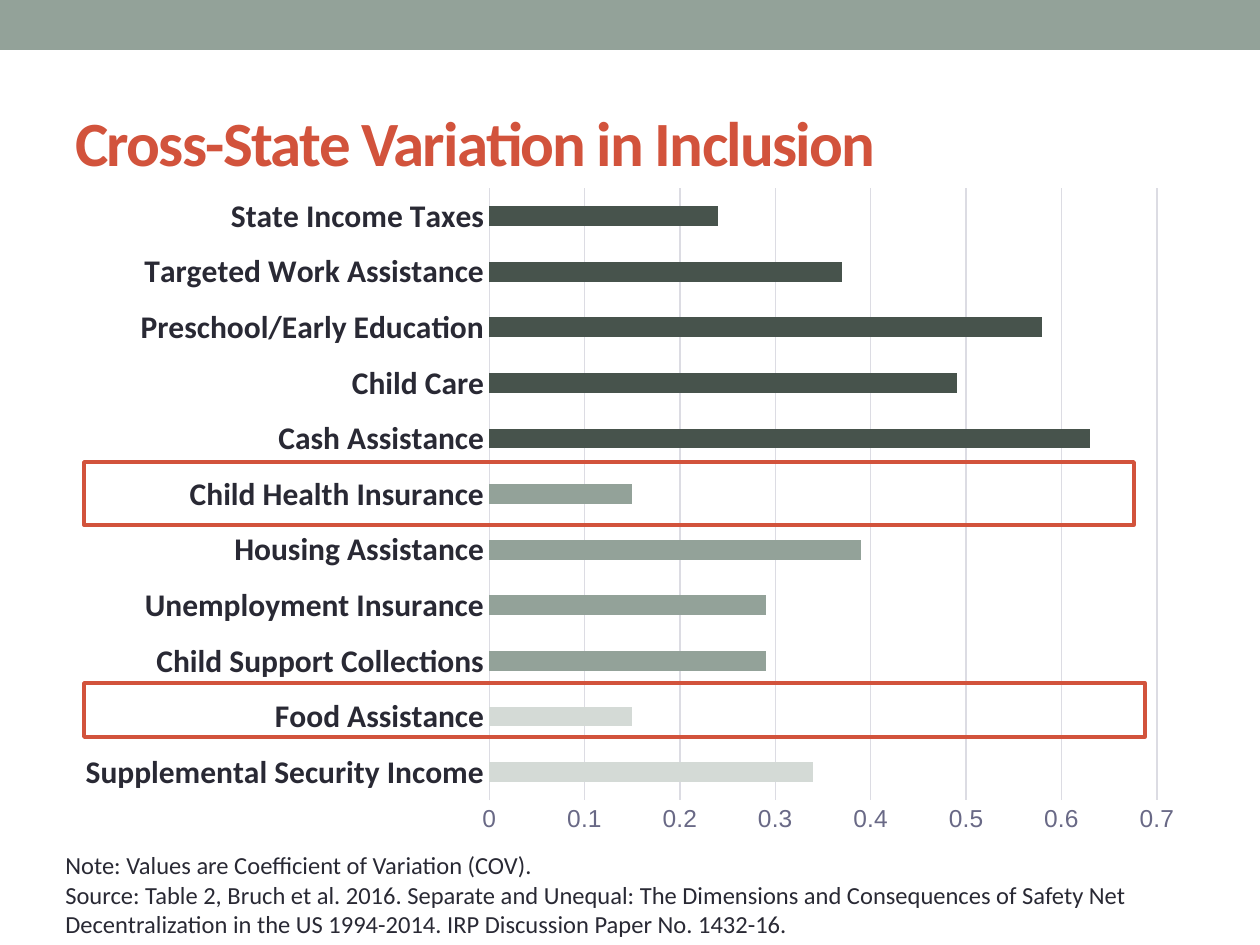
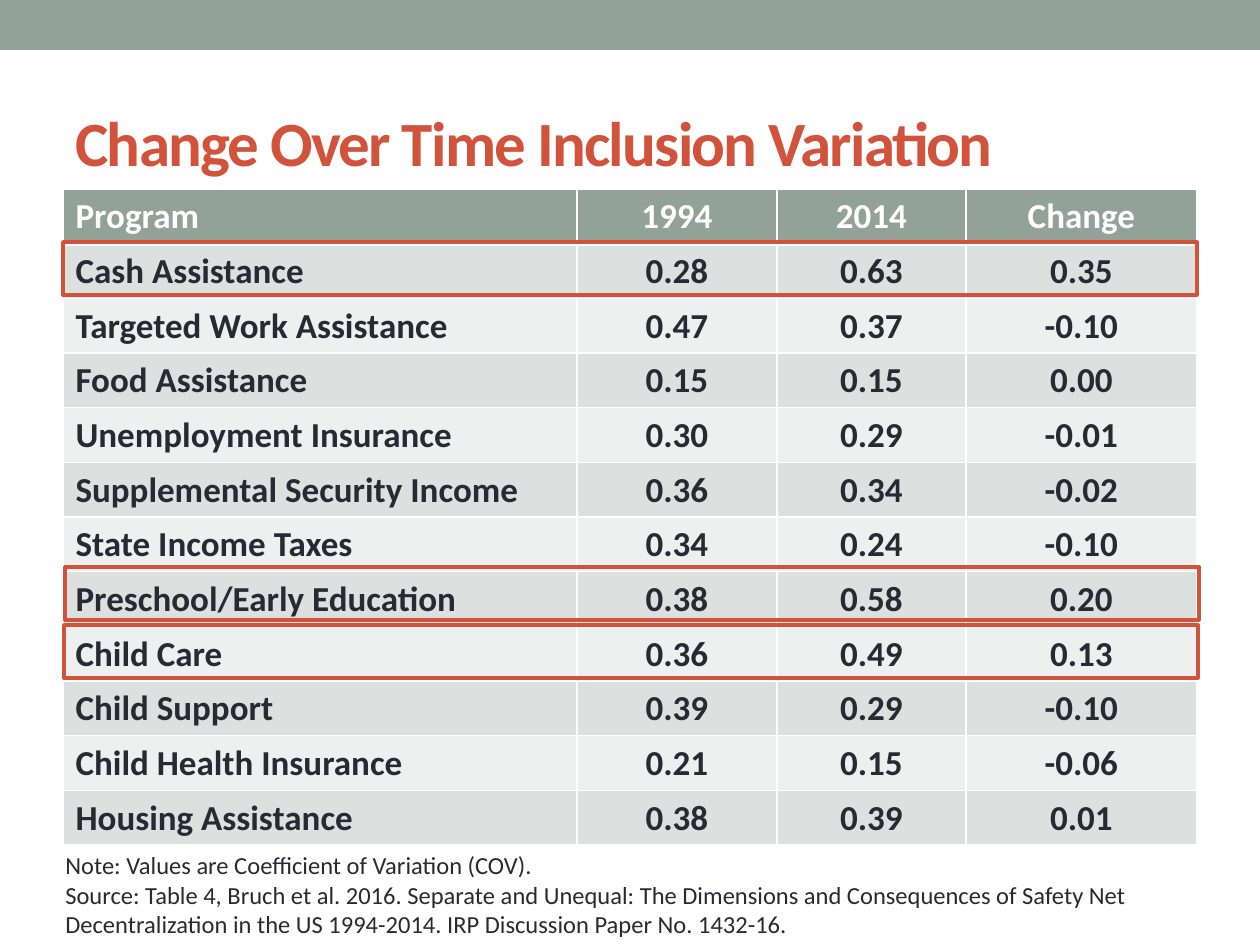
from collections import namedtuple
from dataclasses import dataclass

from lxml import etree
from pptx import Presentation
from pptx.chart.data import CategoryChartData
from pptx.dml.color import RGBColor
from pptx.enum.chart import XL_CHART_TYPE as ChartType, XL_TICK_MARK as TickMark
from pptx.enum.shapes import MSO_SHAPE as Preset
from pptx.enum.text import MSO_ANCHOR as Anchor, PP_ALIGN as Align
from pptx.oxml import parse_xml
from pptx.oxml.ns import nsdecls, qn
from pptx.util import Emu, Pt

PX_PER_INCH = 126
Box = namedtuple("Box", "left top width height")


@dataclass(frozen=True)
class Theme:
    sage: str = "93A299"
    pale_sage: str = "D4DAD6"
    dark_sage: str = "47534C"
    rust: str = "D2533C"
    ink: str = "292934"
    axis_text: str = "696986"
    grid: str = "DCDCE3"
    white: str = "FFFFFF"
    band_odd: str = "DCE0DE"
    band_even: str = "EEF0EF"
    font: str = "Calibri"
    axis_font: str = "Arial"
    title_size: int = 36
    cell_size: int = 20
    category_size: int = 18
    small_size: int = 14
    chart_size: int = 10
    grid_width: float = 0.75
    highlight_width: float = 2.08


THEME = Theme()
SLIDE = Box(0, 0, 1260, 945)
BAND = Box(0, 0, 1260, 50)
TITLE = Box(63, 73, 1134, 136)
NOTE = Box(53, 844, 1144, 102)
CHART = Box(63, 175, 1134, 671)
TABLE = Box(63, 189, 1134, 624)

# From the bottom of the chart to the top
VARIATION = [
    ("Supplemental Security Income", 0.34, THEME.pale_sage),
    ("Food Assistance", 0.15, THEME.pale_sage),
    ("Child Support Collections", 0.29, THEME.sage),
    ("Unemployment Insurance", 0.29, THEME.sage),
    ("Housing Assistance", 0.39, THEME.sage),
    ("Child Health Insurance", 0.15, THEME.sage),
    ("Cash Assistance", 0.63, THEME.dark_sage),
    ("Child Care", 0.49, THEME.dark_sage),
    ("Preschool/Early Education", 0.58, THEME.dark_sage),
    ("Targeted Work Assistance", 0.37, THEME.dark_sage),
    ("State Income Taxes", 0.24, THEME.dark_sage),
]
CHART_HIGHLIGHTS = [Box(84, 462, 1050, 63), Box(84, 683, 1061, 54)]

CHANGE = [
    ("Program", "1994", "2014", "Change"),
    ("Cash Assistance", "0.28", "0.63", "0.35"),
    ("Targeted Work Assistance", "0.47", "0.37", "-0.10"),
    ("Food Assistance", "0.15", "0.15", "0.00"),
    ("Unemployment Insurance", "0.30", "0.29", "-0.01"),
    ("Supplemental Security Income", "0.36", "0.34", "-0.02"),
    ("State Income Taxes", "0.34", "0.24", "-0.10"),
    ("Preschool/Early Education", "0.38", "0.58", "0.20"),
    ("Child Care", "0.36", "0.49", "0.13"),
    ("Child Support", "0.39", "0.29", "-0.10"),
    ("Child Health Insurance", "0.21", "0.15", "-0.06"),
    ("Housing Assistance", "0.38", "0.39", "0.01"),
]
COLUMN_WIDTHS = [514, 200, 189, 231]
TABLE_HIGHLIGHTS = [Box(63, 242, 1134, 53), Box(65, 567, 1134, 53), Box(64, 625, 1134, 53)]


def px(length):
    return Emu(round(length * 914400 / PX_PER_INCH))


def place(box):
    return [px(length) for length in box]


def rgb(color):
    return RGBColor.from_string(color)


def style_font(font, size, color, bold=False, name=THEME.font):
    font.name, font.size, font.bold = name, Pt(size), bold
    font.color.rgb = rgb(color)


def add_text(page, box, lines, size, color, bold=False):
    """Add a wrapping text box, one paragraph a line, and return its frame."""
    frame = page.shapes.add_textbox(*place(box)).text_frame
    frame.word_wrap = True
    frame.text = "\n".join(lines)
    for para in frame.paragraphs:
        for span in para.runs:
            style_font(span.font, size, color, bold)
    return frame


def add_rectangle(page, box, fill=None, line=None):
    shape = page.shapes.add_shape(Preset.RECTANGLE, *place(box))
    shape.shadow.inherit = False
    if fill:
        shape.fill.solid()
        shape.fill.fore_color.rgb = rgb(fill)
    else:
        shape.fill.background()
    if line:
        shape.line.color.rgb = rgb(line)
        shape.line.width = Pt(THEME.highlight_width)
    else:
        shape.line.fill.background()


def add_highlights(page, boxes):
    for box in boxes:
        add_rectangle(page, box, line=THEME.rust)


def add_page(deck, title, table_number):
    """Add a slide with the band, the title and the source note."""
    page = deck.slides.add_slide(deck.slide_layouts[6])
    add_rectangle(page, BAND, fill=THEME.sage)
    frame = add_text(page, TITLE, [title], THEME.title_size, THEME.rust, bold=True)
    frame.vertical_anchor = Anchor.MIDDLE
    frame.paragraphs[0].runs[0].font._element.set("spc", "-100")
    add_text(page, NOTE, [
        "Note: Values are Coefficient of Variation (COV).",
        f"Source: Table {table_number}, Bruch et al. 2016. Separate and Unequal: "
        "The Dimensions and Consequences of Safety Net Decentralization in the US "
        "1994-2014. IRP Discussion Paper No. 1432-16.",
    ], THEME.small_size, THEME.ink)
    return page


def style_line(line):
    line.color.rgb = rgb(THEME.grid)
    line.width = Pt(THEME.grid_width)


def add_variation_chart(page, box):
    names, values, tones = zip(*VARIATION)
    data = CategoryChartData()
    data.categories = names
    data.add_series("Series 1", values)
    chart = page.shapes.add_chart(ChartType.BAR_CLUSTERED, *place(box), data).chart
    chart.has_legend = chart.has_title = False
    style_font(chart.font, THEME.chart_size, THEME.ink, name=THEME.axis_font)

    plot = chart.plots[0]
    plot.gap_width = 182
    plot.vary_by_categories = False
    series = plot.series[0]
    series.format.fill.solid()
    series.format.fill.fore_color.rgb = rgb(THEME.sage)
    for index, tone in enumerate(tones):
        if tone != THEME.sage:
            fill = series.points[index].format.fill
            fill.solid()
            fill.fore_color.rgb = rgb(tone)

    programs, scale = chart.category_axis, chart.value_axis
    for axis in (programs, scale):
        axis.major_tick_mark = axis.minor_tick_mark = TickMark.NONE
    style_font(programs.tick_labels.font, THEME.category_size, THEME.ink, bold=True)
    style_line(programs.format.line)
    style_font(scale.tick_labels.font, THEME.small_size, THEME.axis_text, name=THEME.axis_font)
    scale.minimum_scale, scale.maximum_scale, scale.major_unit = 0, 0.7, 0.1
    scale.format.line.fill.background()
    style_line(scale.major_gridlines.format.line)


def add_border(cell, side, width):
    border = parse_xml(f'<a:ln{side} {nsdecls("a")} w="{Pt(width)}"/>')
    fill = etree.SubElement(border, qn("a:solidFill"))
    etree.SubElement(fill, qn("a:srgbClr"), val=THEME.white)
    cell._tc.get_or_add_tcPr().append(border)


def style_cell(cell, row, column):
    """Format a cell by its place: header row, banded rows, centred values."""
    for side in "LRTB":
        under_header = (row, side) in ((0, "B"), (1, "T"))
        add_border(cell, side, 3 if under_header else 1)
    bands = (THEME.band_even, THEME.band_odd)
    cell.fill.solid()
    cell.fill.fore_color.rgb = rgb(bands[row % 2] if row else THEME.sage)
    para = cell.text_frame.paragraphs[0]
    para.alignment = Align.CENTER if column else Align.LEFT
    style_font(para.runs[0].font, THEME.cell_size, THEME.ink if row else THEME.white, bold=True)


def add_change_table(page, box):
    table = page.shapes.add_table(len(CHANGE), len(COLUMN_WIDTHS), *place(box)).table
    table.horz_banding = False
    for column, width in zip(table.columns, COLUMN_WIDTHS):
        column.width = px(width)
    for row, texts in enumerate(CHANGE):
        for column, text in enumerate(texts):
            cell = table.cell(row, column)
            cell.text_frame.text = text
            style_cell(cell, row, column)


def main():
    deck = Presentation()
    deck.slide_width, deck.slide_height = px(SLIDE.width), px(SLIDE.height)

    page = add_page(deck, "Cross-State Variation in Inclusion", 2)
    add_variation_chart(page, CHART)
    add_highlights(page, CHART_HIGHLIGHTS)

    page = add_page(deck, "Change Over Time Inclusion Variation", 4)
    add_change_table(page, TABLE)
    add_highlights(page, TABLE_HIGHLIGHTS)

    deck.save("out.pptx")


if __name__ == "__main__":
    main()
